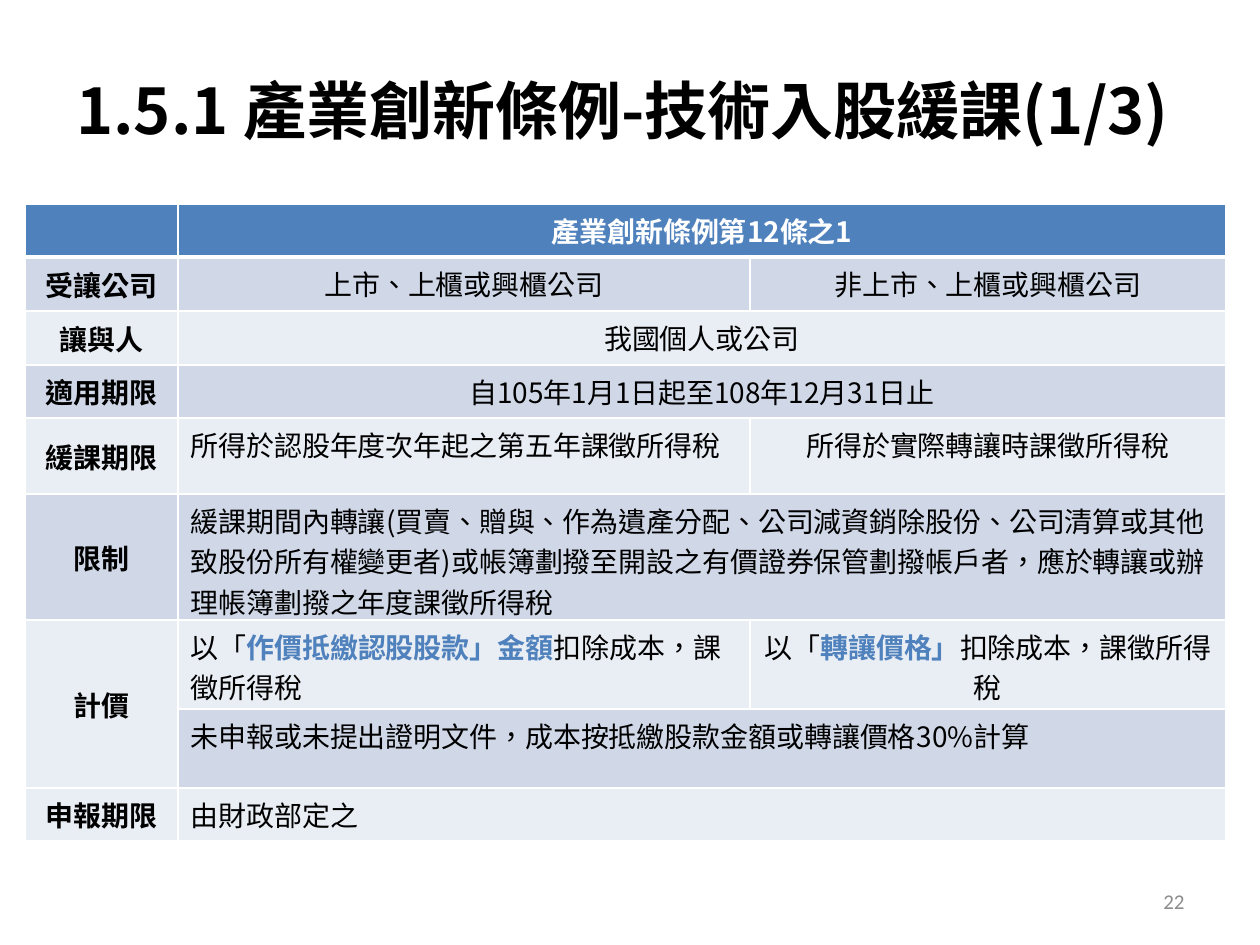
import pptx
import pptx.util
import pptx.dml.color
import pptx.enum.lang
import pptx.enum.text
import pptx.oxml.ns
from lxml import etree

COLORS = {"header": "4F81BD", "dark": "D0D8E8", "light": "E9EDF4",
          "white": "FFFFFF", "text": "000000", "number": "8C8C8C"}
CJK = "Noto Sans CJK SC"
LEFT, CENTER, RIGHT = (pptx.enum.text.PP_ALIGN.LEFT, pptx.enum.text.PP_ALIGN.CENTER,
                       pptx.enum.text.PP_ALIGN.RIGHT)
MIDDLE = pptx.enum.text.MSO_ANCHOR.MIDDLE

TITLE = "1.5.1 產業創新條例-技術入股緩課(1/3)"
COLUMNS = [153, 572, 476]
# Height, fill, row label, then (alignment, text) for each cell; a lone cell spans both columns.
# In a list of pieces every second piece is emphasised.
ROWS = [
    (53, "header", "", [(CENTER, "產業創新條例第12條之1")]),
    (54, "dark", "受讓公司", [(CENTER, "上市、上櫃或興櫃公司"), (CENTER, "非上市、上櫃或興櫃公司")]),
    (54, "light", "讓與人", [(CENTER, "我國個人或公司")]),
    (53, "dark", "適用期限", [(CENTER, "自105年1月1日起至108年12月31日止")]),
    (76, "light", "緩課期限", [(LEFT, "所得於認股年度次年起之第五年課徵所得稅"),
                           (CENTER, "所得於實際轉讓時課徵所得稅")]),
    (126, "dark", "限制", [(LEFT, "緩課期間內轉讓(買賣、贈與、作為遺產分配、公司減資銷除股份、公司清算或其他致股份所有權變更者)"
                                "或帳簿劃撥至開設之有價證券保管劃撥帳戶者，應於轉讓或辦理帳簿劃撥之年度課徵所得稅")]),
    (89, "light", "計價", [(LEFT, ["以「", "作價抵繳認股股款」金額", "扣除成本，課徵所得稅"]),
                         (CENTER, ["以「", "轉讓價格」", "扣除成本，課徵所得稅"])]),
    (79, "dark", None, [(LEFT, "未申報或未提出證明文件，成本按抵繳股款金額或轉讓價格30%計算")]),
    (53, "light", "申報期限", [(LEFT, "由財政部定之")]),
]


def px(value):
    return pptx.util.Emu(value * 914400 // 126)


def rgb(name):
    return pptx.dml.color.RGBColor.from_string(COLORS[name])


def write(frame, text, size, color="text", bold=False, align=LEFT, font_name=CJK):
    """Fill the first paragraph; a list of pieces alternates plain and emphasised runs."""
    paragraph = frame.paragraphs[0]
    paragraph.alignment = align
    font = paragraph.font
    font.name, font.size = font_name, pptx.util.Pt(size)
    font.language_id = pptx.enum.lang.MSO_LANGUAGE_ID.TRADITIONAL_CHINESE
    east_asian = etree.SubElement(font._element, pptx.oxml.ns.qn("a:ea"))
    east_asian.set("typeface", font_name)
    pieces = [text] if isinstance(text, str) else text
    if len(pieces) == 1:
        font.bold = bold
        font.color.rgb = rgb(color)
    for index, piece in enumerate(pieces):
        run = paragraph.add_run()
        run.text = piece
        if len(pieces) > 1:
            run.font.bold = index % 2 == 1
            run.font.color.rgb = rgb("header" if index % 2 else color)


def add_text(slide, box, text, size, **style):
    frame = slide.shapes.add_textbox(*map(px, box)).text_frame
    frame.word_wrap = True
    frame.vertical_anchor = MIDDLE
    write(frame, text, size, **style)


def paint(cell, fill):
    """Give a cell white borders and a solid fill."""
    properties = cell._tc.get_or_add_tcPr()
    for side in "LRTB":
        width = 3 if fill == "header" and side == "B" else 1
        line = etree.SubElement(properties, pptx.oxml.ns.qn(f"a:ln{side}"), w=str(pptx.util.Pt(width)))
        solid = etree.SubElement(line, pptx.oxml.ns.qn("a:solidFill"))
        etree.SubElement(solid, pptx.oxml.ns.qn("a:srgbClr"), val=COLORS["white"])
    cell.fill.solid()
    cell.fill.fore_color.rgb = rgb(fill)


def add_rules_table(slide):
    heights = [row[0] for row in ROWS]
    table = slide.shapes.add_table(len(ROWS), len(COLUMNS), px(25), px(204),
                                   px(sum(COLUMNS)), px(sum(heights))).table
    for column, width in zip(table.columns, COLUMNS):
        column.width = px(width)
    for index, (height, fill, label, contents) in enumerate(ROWS):
        table.rows[index].height = px(height)
        for column in range(len(COLUMNS)):
            paint(table.cell(index, column), fill)
        label_cell = table.cell(index, 0)
        if label is None:
            table.cell(index - 1, 0).merge(label_cell)
        elif label:
            label_cell.vertical_anchor = MIDDLE
            write(label_cell.text_frame, label, 16, bold=True, align=CENTER)
        if len(contents) == 1:
            table.cell(index, 1).merge(table.cell(index, 2))
        header = fill == "header"
        for column, (align, text) in enumerate(contents, 1):
            write(table.cell(index, column).text_frame, text, 16,
                  color="white" if header else "text", bold=header, align=align)


def main():
    presentation = pptx.Presentation()
    presentation.slide_width, presentation.slide_height = px(1260), px(945)
    slide = presentation.slides.add_slide(presentation.slide_layouts[6])
    add_text(slide, (903, 876, 294, 50), "22", 12, color="number", align=RIGHT, font_name="Calibri")
    add_rules_table(slide)
    add_text(slide, (64, 45, 1134, 129), TITLE, 36, bold=True)
    presentation.save("out.pptx")


if __name__ == "__main__":
    main()
